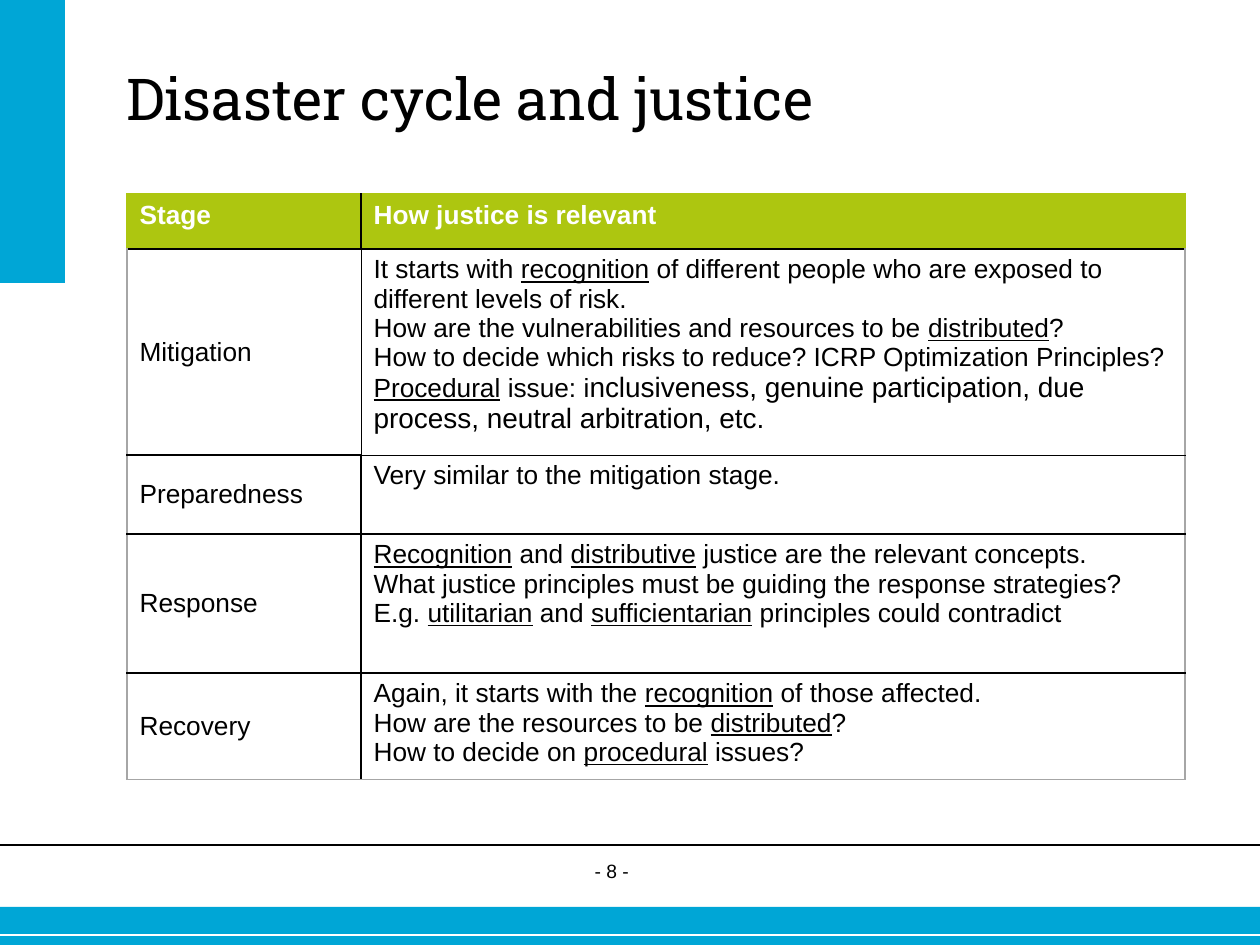
import pptx
import pptx.util
import pptx.oxml
import pptx.dml.color
import pptx.enum.shapes
import pptx.enum.text
import lxml.etree

SCALE = 914400 / 126
COLORS = {"cyan": "00A6D6", "green": "ADC610", "black": "000000",
          "white": "FFFFFF", "gray": "A6A6A6"}


def px(*lengths):
    return [pptx.util.Emu(round(length * SCALE)) for length in lengths]


def add_span(para, text, color, **formats):
    span = para.add_run()
    span.text = text
    span.font.color.rgb = pptx.dml.color.RGBColor.from_string(COLORS[color])
    for name, value in formats.items():
        setattr(span.font, name, value)


deck = pptx.Presentation()
deck.slide_width, deck.slide_height = px(1260, 945)
page = deck.slides.add_slide(deck.slide_layouts[5])

for place in [(0, 907, 1260, 38), (0, 0, 65, 283)]:
    bar = page.shapes.add_shape(pptx.enum.shapes.MSO_SHAPE.RECTANGLE, *px(*place))
    bar.shadow.inherit = False
    bar.fill.solid()
    bar.fill.fore_color.rgb = pptx.dml.color.RGBColor.from_string(COLORS["cyan"])
    bar.line.fill.background()

for y, color, width in [(935, "white", 0.75), (845, "black", 1)]:
    rule = page.shapes.add_connector(
        pptx.enum.shapes.MSO_CONNECTOR.STRAIGHT, *px(0, y, 1260, y))
    rule.line.color.rgb = pptx.dml.color.RGBColor.from_string(COLORS[color])
    rule.line.width = pptx.util.Pt(width)
    lxml.etree.SubElement(rule.element.spPr, pptx.oxml.ns.qn("a:effectLst"))

title = page.shapes.title
number = page.shapes.add_textbox(*px(567, 859, 62, 35))
title.left, title.top, title.width, title.height = px(126, 63, 987, 108)
frame_formats = {"margin_left": 0, "margin_right": 0, "margin_top": 0, "margin_bottom": 0,
                 "word_wrap": True, "auto_size": pptx.enum.text.MSO_AUTO_SIZE.NONE,
                 "vertical_anchor": pptx.enum.text.MSO_ANCHOR.TOP}
for box, text, size, font, align in [
    (title, "Disaster cycle and justice", 33, "Roboto Slab", pptx.enum.text.PP_ALIGN.LEFT),
    (number, "- 8 -", 11, "Arial", pptx.enum.text.PP_ALIGN.RIGHT),
]:
    for name, value in frame_formats.items():
        setattr(box.text_frame, name, value)
    para = box.text_frame.paragraphs[0]
    para.alignment = align
    add_span(para, text, "black", size=pptx.util.Pt(size), name=font)

# Underscores enclose underlined words; a bar starts larger text.
rows = [
    (55, "Stage", ["How justice is relevant"]),
    (206, "Mitigation", [
        "It starts with _recognition_ of different people who are exposed to "
        "different levels of risk.",
        "How are the vulnerabilities and resources to be _distributed_?",
        "How to decide which risks to reduce? ICRP Optimization Principles?",
        "_Procedural_ issue: i|nclusiveness, genuine participation, due process, "
        "neutral arbitration, etc."]),
    (79, "Preparedness", ["Very similar to the mitigation stage."]),
    (139, "Response", [
        "_Recognition_ and _distributive_ justice are the relevant concepts.",
        "What justice principles must be guiding the response strategies? "
        "E.g. _utilitarian_ and _sufficientarian_ principles could contradict"]),
    (107, "Recovery", [
        "Again, it starts with the _recognition_ of those affected.",
        "How are the resources to be _distributed_?",
        "How to decide on _procedural_ issues?"]),
]
table = page.shapes.add_table(len(rows), 2, *px(127, 194, 1058, 586)).table
for column, width in zip(table.columns, px(234, 824)):
    column.width = width

last = len(rows) - 1
for r, (height, stage, answers) in enumerate(rows):
    table.rows[r].height = px(height)[0]
    for c, lines in enumerate([[stage], answers]):
        cell = table.cell(r, c)
        edge = ("green", 0.79) if r == 0 else ("gray", 0.79)
        inner = ("black", 0.25 if r == 1 else 1)
        borders = {
            "lnL": inner if c else edge,
            "lnR": edge if c else inner,
            "lnT": edge if r == 0 else ("black", 0.25 if (r, c) == (2, 1) else 1),
            "lnB": edge if r == last else ("black", 0.25 if (r, c) == (1, 1) else 1),
        }
        properties = cell._tc.get_or_add_tcPr()
        for tag, (color, width) in borders.items():
            line = lxml.etree.SubElement(
                properties, pptx.oxml.ns.qn(f"a:{tag}"), w=str(pptx.util.Pt(width)))
            fill = lxml.etree.SubElement(line, pptx.oxml.ns.qn("a:solidFill"))
            lxml.etree.SubElement(fill, pptx.oxml.ns.qn("a:srgbClr"), val=COLORS[color])
        if r == 0:
            cell.fill.solid()
            cell.fill.fore_color.rgb = pptx.dml.color.RGBColor.from_string(COLORS["green"])
        else:
            cell.fill.background()
        if r and c == 0:
            cell.vertical_anchor = pptx.enum.text.MSO_ANCHOR.MIDDLE
        for i, text in enumerate(lines):
            para = cell.text_frame.add_paragraph() if i else cell.text_frame.paragraphs[0]
            normal, _, larger = text.partition("|")
            spans = [(part, 15, k % 2 == 1) for k, part in enumerate(normal.split("_"))]
            for part, size, underlined in spans + [(larger, 16, False)]:
                if part:
                    add_span(para, part, "black" if r else "white", name="Arial",
                             size=pptx.util.Pt(size), bold=r == 0, underline=underlined)

deck.save("out.pptx")
